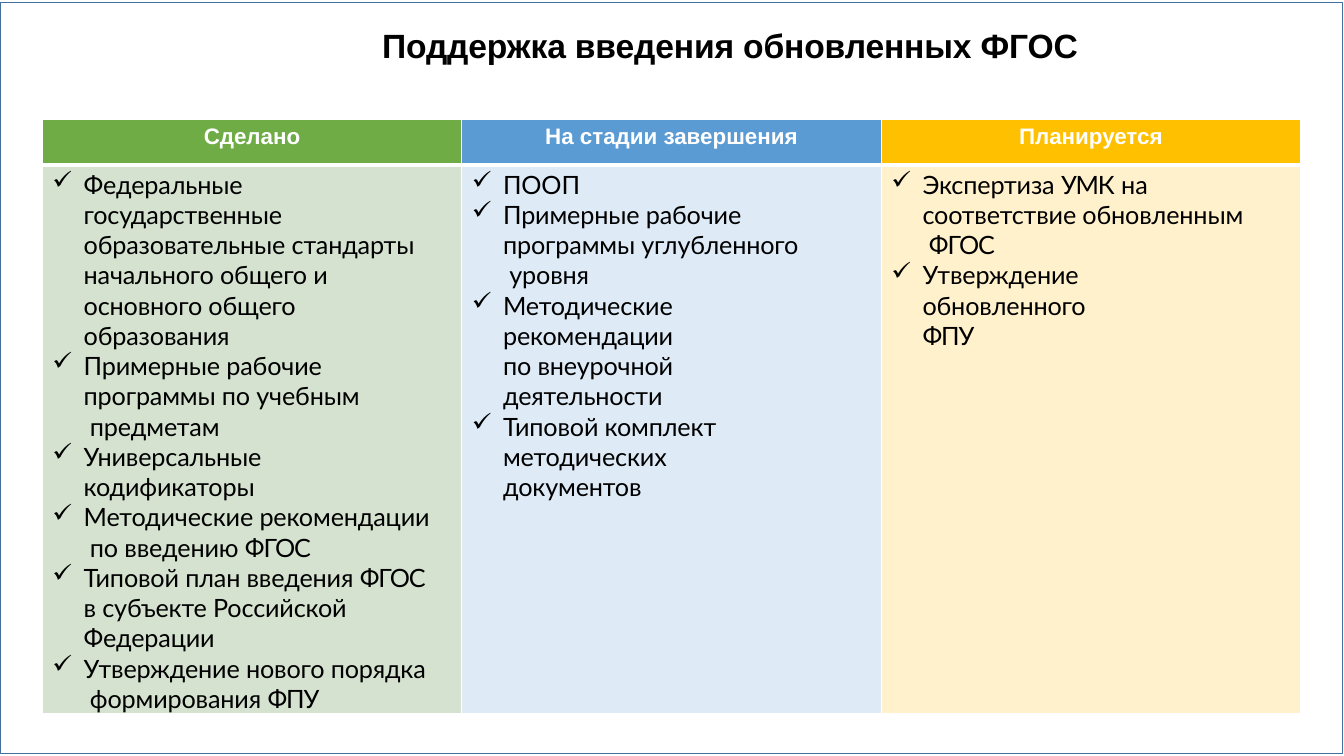
from lxml import etree
from pptx import Presentation
from pptx.enum import shapes, text
from pptx.dml.color import RGBColor
from pptx.oxml import ns
from pptx.util import Inches, Pt

COLORS = {
    "ink": "000000", "white": "FFFFFF", "frame": "41709C",
    "green": "6FAC46", "pale_green": "D4E2CF",
    "blue": "5B9BD4", "pale_blue": "DEEBF7",
    "amber": "FFC000", "pale_amber": "FFF1CC",
}
TITLE = "Поддержка введения обновленных ФГОС"
STAGES = [
    ("Сделано", "green", "pale_green", [
        "Федеральные\nгосударственные\nобразовательные стандарты\n"
        "начального общего и\nосновного общего\nобразования",
        "Примерные рабочие\nпрограммы по учебным\n предметам",
        "Универсальные\nкодификаторы",
        "Методические рекомендации\n по введению |ФГОС|",
        "Типовой план введения |ФГОС|\nв субъекте Российской\nФедерации",
        "Утверждение нового порядка\n формирования |ФПУ|",
    ]),
    ("На стадии завершения", "blue", "pale_blue", [
        "ПООП",
        "Примерные рабочие\nпрограммы углубленного\n уровня",
        "Методические\nрекомендации\nпо внеурочной\nдеятельности",
        "Типовой комплект\nметодических\nдокументов",
    ]),
    ("Планируется", "amber", "pale_amber", [
        "Экспертиза |УМК| на\nсоответствие обновленным\n |ФГОС|",
        "Утверждение\nобновленного\n|ФПУ|",
    ]),
]
COLUMN_WIDTH = 4.16
ROW_HEIGHTS = (0.46, 5.2)
EDGES = ("lnL", "lnR", "lnT", "lnB")
HEADER_BORDERS = (1, 1, 1, 3)
BODY_BORDERS = (1, 1, 3, 1)


def rgb(name):
    return RGBColor.from_string(COLORS[name])


def set_font(paragraph, face, size, color, bold):
    font = paragraph.font
    font.name, font.size, font.bold = face, Pt(size), bold
    font.color.rgb = rgb(color)


def style_cell(cell, fill, margin_top, borders):
    cell.margin_left = cell.margin_right = cell.margin_bottom = 0
    cell.margin_top = Inches(margin_top)
    properties = cell._tc.get_or_add_tcPr()
    for edge, width in zip(EDGES, borders):
        line = etree.SubElement(properties, ns.qn("a:" + edge), w=str(Pt(width)))
        solid = etree.SubElement(line, ns.qn("a:solidFill"))
        etree.SubElement(solid, ns.qn("a:srgbClr"), val=COLORS["white"])
    cell.fill.solid()
    cell.fill.fore_color.rgb = rgb(fill)


def add_item(paragraph, item):
    for row, line in enumerate(item.split("\n")):
        if row:
            paragraph.add_line_break()
        for order, part in enumerate(line.split("|")):
            if part:
                run = paragraph.add_run()
                run.text = part
                is_acronym = order % 2 == 1
                run.font._element.set("spc", "-80" if is_acronym else "-10")
    set_font(paragraph, "Lato", 18, "ink", False)
    properties = paragraph._p.get_or_add_pPr()
    properties.set("marL", str(Inches(0.41)))
    properties.set("indent", str(Inches(-0.31)))
    bullet = etree.Element(ns.qn("a:buChar"), char="✓")
    properties.find(ns.qn("a:defRPr")).addprevious(bullet)


def main():
    deck = Presentation()
    deck.slide_width, deck.slide_height = Inches(13.33), Inches(7.5)
    slide = deck.slides.add_slide(deck.slide_layouts[6])

    frame = slide.shapes.add_shape(
        shapes.MSO_SHAPE.RECTANGLE, 0, Inches(0.02), Inches(13.31), Inches(7.45))
    frame.shadow.inherit = False
    frame.fill.background()
    frame.line.color.rgb = rgb("frame")
    frame.line.width = Pt(0.25)

    title = slide.shapes.add_textbox(
        Inches(3.79), Inches(0.24), Inches(6.97), Inches(0.43)).text_frame
    title.word_wrap = True
    title.margin_left = title.margin_right = title.margin_bottom = 0
    title.margin_top = Inches(0.01)
    heading = title.paragraphs[0]
    heading.text = TITLE
    heading.space_before = Pt(1)
    heading.runs[0].font._element.set("spc", "-10")
    set_font(heading, "Arial", 24, "ink", True)

    table = slide.shapes.add_table(
        2, len(STAGES), Inches(0.42), Inches(1.18),
        Inches(COLUMN_WIDTH * len(STAGES)), Inches(sum(ROW_HEIGHTS))).table
    for row, height in zip(table.rows, ROW_HEIGHTS):
        row.height = Inches(height)

    for column, (stage, strong, pale, items) in enumerate(STAGES):
        table.columns[column].width = Inches(COLUMN_WIDTH)
        header, body = table.cell(0, column), table.cell(1, column)
        style_cell(header, strong, 0.05, HEADER_BORDERS)
        style_cell(body, pale, 0.04, BODY_BORDERS)
        label = header.text_frame.paragraphs[0]
        label.text = stage
        label.alignment = text.PP_ALIGN.CENTER
        set_font(label, "Arial", 16, "white", True)
        for order, item in enumerate(items):
            entry = body.text_frame.add_paragraph() if order else body.text_frame.paragraphs[0]
            add_item(entry, item)

    deck.save("out.pptx")


if __name__ == "__main__":
    main()
